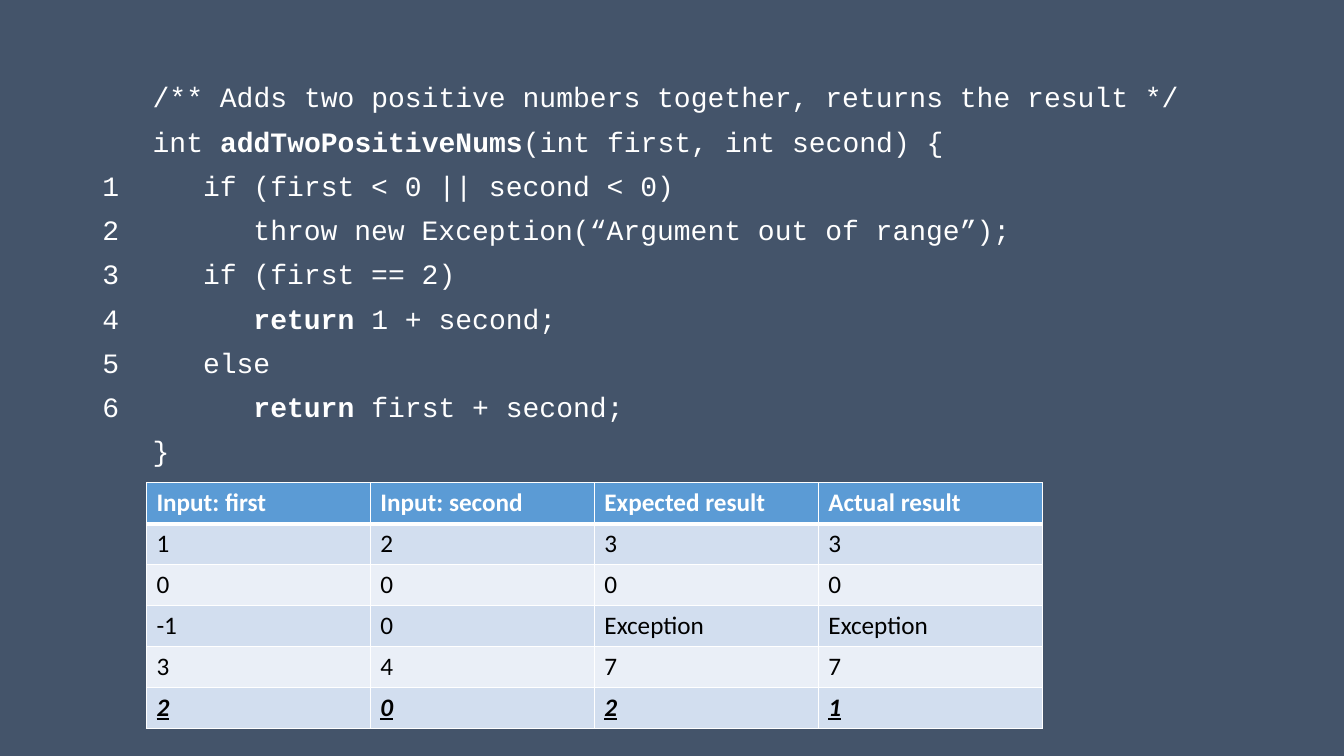
from pptx import Presentation
from pptx.util import Pt
from pptx.dml.color import RGBColor as RGB
from lxml.etree import SubElement as Sub
from pptx.oxml.ns import qn

HUES = {"back": "44546A", "white": "FFFFFF", "black": "000000",
        "head": "5B9BD5", "odd": "D2DEEF", "even": "EAEFF7"}


def style(run, face, size, hue, bold=False):
    font = run.font
    font.name, font.size, font.bold = face, Pt(size), bold
    font.color.rgb = RGB.from_string(HUES[hue])


def edge(cell, side, width):
    line = Sub(cell._tc.get_or_add_tcPr(), qn("a:ln" + side), w=str(Pt(width)))
    fill = Sub(line, qn("a:solidFill"))
    Sub(fill, qn("a:srgbClr"), val=HUES["white"])


# Slide and background
deck = Presentation()
deck.slide_width, deck.slide_height = Pt(960), Pt(540)
slide = deck.slides.add_slide(deck.slide_layouts[6])
slide.background.fill.solid()
slide.background.fill.fore_color.rgb = RGB.from_string(HUES["back"])

# Code: line number, column, text; backticks enclose bold words
CODE = [
    ("", 3, "/** Adds two positive numbers together, returns the result */"),
    ("", 3, "int `addTwoPositiveNums`(int first, int second) {"),
    ("1", 6, "if (first < 0 || second < 0)"),
    ("2", 9, "throw new Exception(“Argument out of range”);"),
    ("3", 6, "if (first == 2)"),
    ("4", 9, "`return `1 + second;"),
    ("5", 6, "else"),
    ("6", 9, "`return `first + second;"),
    ("", 3, "}"),
]
CHAR = 12  # width of one code character
box = slide.shapes.add_textbox(Pt(66), Pt(56.25), Pt(828), Pt(430))
frame = box.text_frame
frame.word_wrap = True
for i, (num, col, text) in enumerate(CODE):
    para = frame.paragraphs[0] if i == 0 else frame.add_paragraph()
    para.line_spacing, para.space_before = 0.9, Pt(10)
    # The number hangs left of the code, and a tab leads to the indent
    props = para._p.get_or_add_pPr()
    props.set("marL", str(Pt(col * CHAR)))
    props.set("indent", str(-Pt(col * CHAR) if num else 0))
    lead = num + "\t" if num else ""
    for j, part in enumerate((lead + text).split("`")):
        if part:
            run = para.add_run()
            run.text = part
            style(run, "Courier New", 20, "white", j % 2 == 1)

# Table of test cases
ROWS = [
    ("Input: first", "Input: second", "Expected result", "Actual result"),
    ("1", "2", "3", "3"),
    ("0", "0", "0", "0"),
    ("-1", "0", "Exception", "Exception"),
    ("3", "4", "7", "7"),
    ("2", "0", "2", "1"),
]
WIDE, HIGH = 160, 29.2
last = len(ROWS) - 1
table = slide.shapes.add_table(len(ROWS), 4, Pt(104.6), Pt(344.9),
                               Pt(4 * WIDE), Pt(len(ROWS) * HIGH)).table
for col in table.columns:
    col.width = Pt(WIDE)
for r, row in enumerate(ROWS):
    table.rows[r].height = Pt(HIGH)
    tint = "head" if r == 0 else "odd" if r % 2 else "even"
    for c, text in enumerate(row):
        cell = table.cell(r, c)
        # The rule under the header is thicker
        for side, thick in (("L", False), ("R", False),
                            ("T", r == 1), ("B", r == 0)):
            edge(cell, side, 3 if thick else 1)
        cell.fill.solid()
        cell.fill.fore_color.rgb = RGB.from_string(HUES[tint])
        cell.text_frame.text = text
        run = cell.text_frame.paragraphs[0].runs[0]
        style(run, "Calibri", 18, "black" if r else "white", r in (0, last))
        run.font.italic = run.font.underline = r == last

deck.save("out.pptx")
